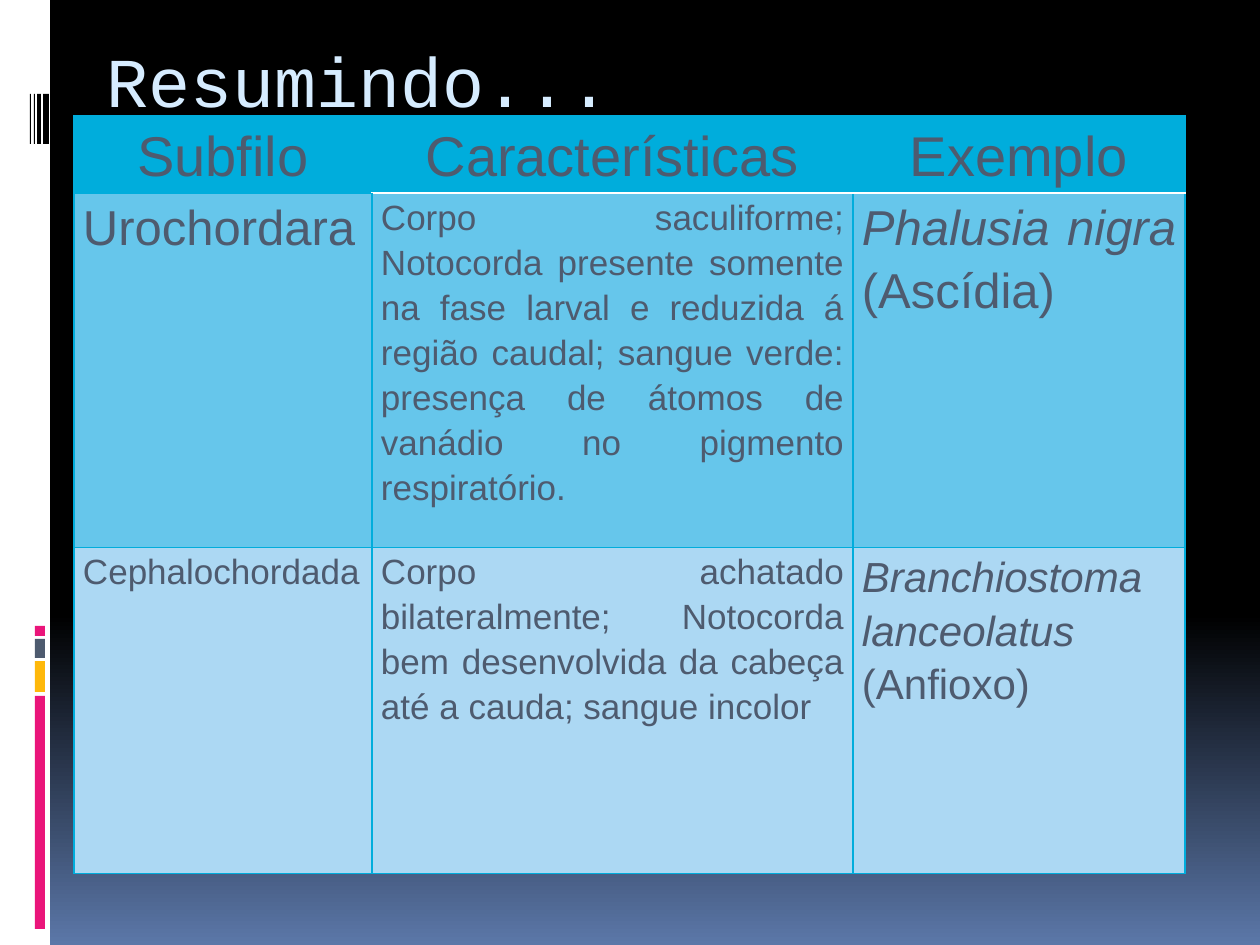
from lxml import etree
from pptx import Presentation
from pptx import util as u
from pptx.dml.color import RGBColor
from pptx.enum import shapes, text
from pptx.oxml import ns

SCALE = 914400 / 126
COLORS = {
    "white": "FFFFFF", "black": "000000", "dusk": "5B77A8", "pink": "EA157A",
    "amber": "FEB80A", "slate": "4E5B6F", "title": "D6ECFF", "cyan": "00ADDC",
    "band_dark": "66C6EB", "band_light": "ACD8F3",
}
THIN, THICK = 0.94, 1.5
HEADER = ("Subfilo", "Características", "Exemplo")
# Each cell: size in points, then (wording, italic) spans
BODY = (
    (
        (28, [("Urochordara", False)]),
        (20, [("Corpo saculiforme; Notocorda presente somente na fase larval e "
               "reduzida á região caudal; sangue verde: presença de átomos de "
               "vanádio no pigmento respiratório.", False)]),
        (28, [("Phalusia nigra ", True), ("(Ascídia)", False)]),
    ),
    (
        (20, [("Cephalochordada", False)]),
        (20, [("Corpo achatado bilateralmente; Notocorda bem desenvolvida da "
               "cabeça até a cauda; sangue incolor", False)]),
        (24, [("Branchiostoma lanceolatus ", True), ("(Anfioxo)", False)]),
    ),
)


def px(length):
    return u.Emu(round(length * SCALE))


def rgb(name):
    return RGBColor.from_string(COLORS[name])


def assign(target, **values):
    for name, value in values.items():
        setattr(target, name, value)


def add_span(para, wording, color, **font):
    span = para.add_run()
    span.text = wording
    assign(span.font, **font)
    span.font.color.rgb = rgb(color)


def add_block(page, left, top, width, height, color):
    block = page.shapes.add_shape(
        shapes.MSO_SHAPE.RECTANGLE, px(left), px(top), px(width), px(height))
    block.shadow.inherit = False
    block.fill.solid()
    block.fill.fore_color.rgb = rgb(color)
    block.line.fill.background()


def paint_background(page):
    fill = page.background.fill
    fill.gradient()
    fill.gradient_angle = 270
    for stop, position, color in zip(fill.gradient_stops, (0.65, 1), ("black", "dusk")):
        stop.position = position
        stop.color.rgb = rgb(color)


def add_sidebar(page, left, top, width, height):
    add_block(page, left, top, width, height, "white")
    for offset, size, color in ((626, 10, "pink"), (639, 19, "slate"),
                                (661, 31, "amber"), (696, 233, "pink")):
        add_block(page, left + 35, top + offset, 10, size, color)
    for offset, size in ((30, 1), (34, 1), (37, 4), (43, 6)):
        add_block(page, left + offset, top + 94, size, 50, "black")


def add_title(page, left, top, width, height):
    box = page.shapes.add_textbox(px(left), px(top), px(width), px(height))
    assign(box.text_frame, word_wrap=True, vertical_anchor=text.MSO_ANCHOR.MIDDLE)
    add_span(box.text_frame.paragraphs[0], "Resumindo...", "title",
             name="Courier New", size=u.Pt(40))


def set_borders(cell, borders):
    """Draw borders given as {side: (color, points)}, side in L, R, T, B."""
    properties = cell._tc.get_or_add_tcPr()
    for index, side in enumerate("LRTB"):
        color, points = borders[side]
        line = etree.Element(ns.qn(f"a:ln{side}"), w=str(u.Pt(points)))
        fill = etree.SubElement(line, ns.qn("a:solidFill"))
        etree.SubElement(fill, ns.qn("a:srgbClr"), val=COLORS[color])
        properties.insert(index, line)


def fill_cell(cell, color, size, spans, alignment):
    assign(cell, margin_left=px(9), margin_right=px(9), margin_top=0, margin_bottom=0)
    cell.fill.solid()
    cell.fill.fore_color.rgb = rgb(color)
    para = cell.text_frame.paragraphs[0]
    assign(para, alignment=alignment, line_spacing=1.15)
    for wording, italic in spans:
        add_span(para, wording, "slate", name="Arial", size=u.Pt(size), italic=italic)


def add_summary_table(page, left, top, columns, rows):
    table = page.shapes.add_table(
        len(rows), len(columns), px(left), px(top),
        px(sum(columns)), px(sum(rows))).table
    for column, width in zip(table.columns, columns):
        column.width = px(width)
    for row, height in zip(table.rows, rows):
        row.height = px(height)

    header = [(32, [(wording, False)]) for wording in HEADER]
    bands = ("cyan", "band_dark", "band_light")
    for r, (contents, color) in enumerate(zip((header, *BODY), bands)):
        alignment = text.PP_ALIGN.JUSTIFY if r else text.PP_ALIGN.CENTER
        for c, (size, spans) in enumerate(contents):
            cell = table.cell(r, c)
            fill_cell(cell, color, size, spans, alignment)
            borders = dict.fromkeys("LRTB", ("cyan", THIN))
            if r and c < 2:
                borders["R" if c == 0 else "L"] = ("cyan", THICK)
            if r < 2 and c:
                borders["T" if r else "B"] = ("white", THICK)
            set_borders(cell, borders)


def main():
    deck = Presentation()
    assign(deck, slide_width=px(1260), slide_height=px(945))
    page = deck.slides.add_slide(deck.slide_layouts[6])
    paint_background(page)
    add_sidebar(page, 0, 0, 50, 945)
    add_title(page, 94, 16, 1071, 126)
    add_summary_table(page, 74, 116, (298, 481, 332), (73, 354, 326))
    deck.save("out.pptx")


if __name__ == "__main__":
    main()
